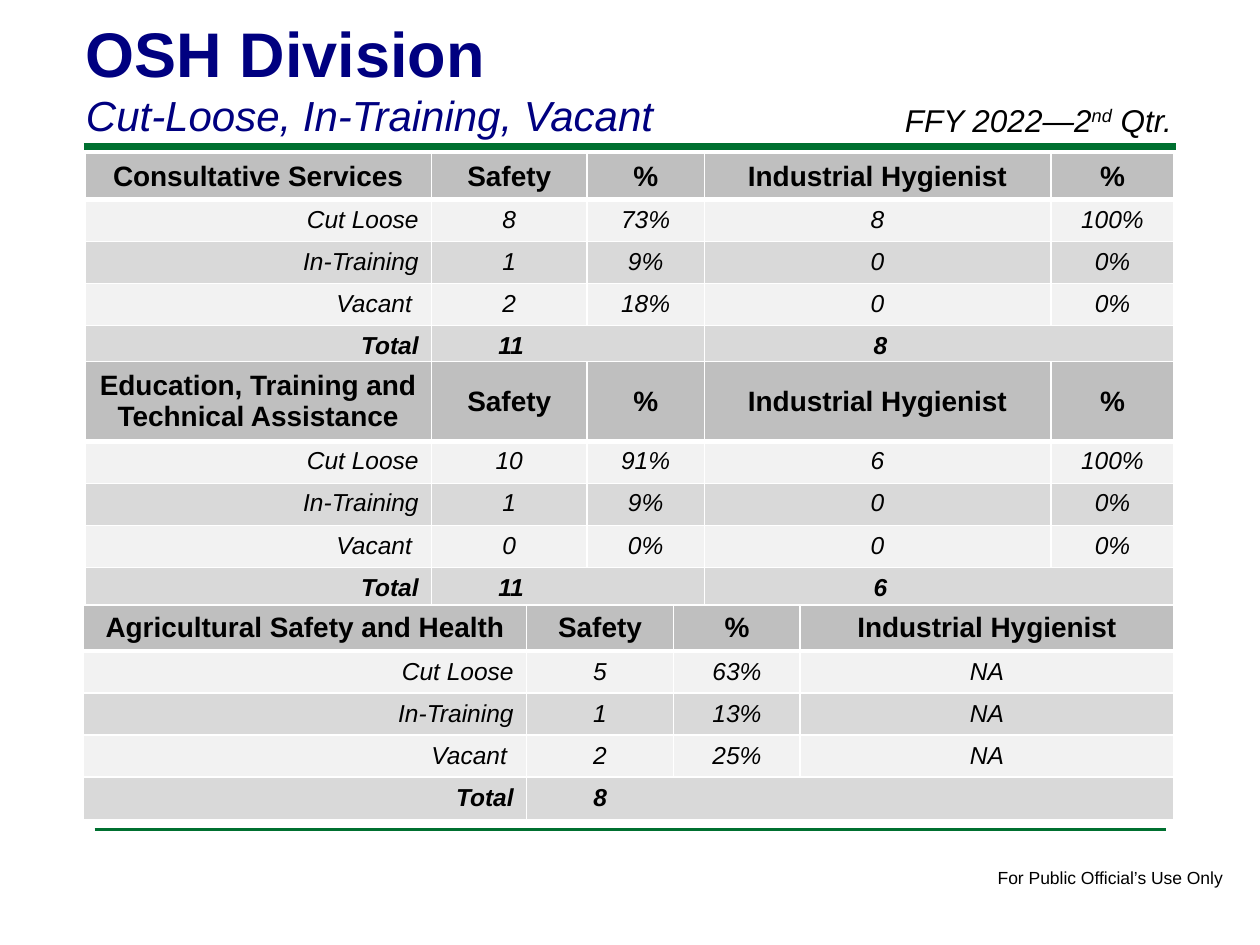
from dataclasses import dataclass

from lxml.etree import SubElement
from pptx import Presentation
from pptx.dml.color import RGBColor
from pptx.enum.shapes import MSO_CONNECTOR as Connector
from pptx.enum.text import MSO_ANCHOR as Anchor, PP_ALIGN as Align
from pptx.oxml.ns import qn
from pptx.util import Pt


@dataclass(frozen=True)
class Theme:
    font: str = "Arial"
    navy: str = "000080"
    green: str = "007030"
    black: str = "000000"
    white: str = "FFFFFF"
    header: str = "BFBFBF"
    bands: tuple = ("F2F2F2", "D9D9D9")
    title_size: float = 36
    subtitle_size: float = 24
    period_size: float = 18
    header_size: float = 16
    body_size: float = 14
    footer_size: float = 10
    thin: float = 1
    thick: float = 3


@dataclass(frozen=True)
class Rule:
    left: float
    right: float
    y: float
    weight: float


@dataclass(frozen=True)
class Total:
    value: str
    column: int
    last_column: int
    indent: float


@dataclass(frozen=True)
class StaffTable:
    left: float
    top: float
    widths: tuple
    header_height: float
    row_height: float
    header: tuple
    counts: tuple
    totals: tuple
    anchor: Anchor = Anchor.TOP


THEME = Theme()
STATUSES = ("Cut Loose", "In-Training", "Vacant ")
COLUMNS = ("Safety", "%", "Industrial Hygienist", "%")
WIDE = (198, 89, 67, 198, 70.5)
SAFETY_INDENT, HYGIENIST_INDENT = 38.3, 96.7

RULES = (Rule(48, 672, 84, 4), Rule(54, 666, 474, 2))
TABLES = (
    StaffTable(48.5, 87.6, WIDE, 25.2, 23, ("Consultative Services", *COLUMNS),
               (("8", "73%", "8", "100%"), ("1", "9%", "0", "0%"), ("2", "18%", "0", "0%")),
               (Total("11", 1, 2, SAFETY_INDENT), Total("8", 3, 4, HYGIENIST_INDENT))),
    StaffTable(48.5, 206.6, WIDE, 43.2, 22.5,
               ("Education, Training and Technical Assistance", *COLUMNS),
               (("10", "91%", "6", "100%"), ("1", "9%", "0", "0%"), ("0", "0%", "0", "0%")),
               (Total("11", 1, 2, SAFETY_INDENT), Total("6", 3, 4, HYGIENIST_INDENT))),
    StaffTable(47.8, 345.6, (253, 84.2, 72.3, 213.5), 24.5, 22.5,
               ("Agricultural Safety and Health", *COLUMNS[:3]),
               (("5", "63%", "NA"), ("1", "13%", "NA"), ("2", "25%", "NA")),
               (Total("8", 1, 3, SAFETY_INDENT),), Anchor.MIDDLE),
)


def style(paragraph, size: float, color: str = THEME.black,
          bold: bool = False, italic: bool = False) -> None:
    font = paragraph.font
    font.name, font.size, font.bold, font.italic = THEME.font, Pt(size), bold, italic
    font.color.rgb = RGBColor.from_string(color)


def add_text_frame(slide, left: float, top: float, width: float, height: float,
                   wrap: bool = True):
    frame = slide.shapes.add_textbox(Pt(left), Pt(top), Pt(width), Pt(height)).text_frame
    frame.word_wrap = wrap
    return frame


def draw_rule(slide, rule: Rule) -> None:
    line = slide.shapes.add_connector(Connector.STRAIGHT, Pt(rule.left), Pt(rule.y),
                                      Pt(rule.right), Pt(rule.y))
    line.line.color.rgb = RGBColor.from_string(THEME.green)
    line.line.width = Pt(rule.weight)
    SubElement(line._element.spPr, qn("a:effectLst"))


def set_borders(cell, top: float, bottom: float) -> None:
    properties = cell._tc.get_or_add_tcPr()
    for side, weight in (("L", THEME.thin), ("R", THEME.thin), ("T", top), ("B", bottom)):
        border = SubElement(properties, qn(f"a:ln{side}"), w=str(Pt(weight)))
        fill = SubElement(border, qn("a:solidFill"))
        SubElement(fill, qn("a:srgbClr"), val=THEME.white)


def write_cell(cell, text: str, align: Align, anchor: Anchor, size: float,
               bold: bool, italic: bool) -> None:
    cell.vertical_anchor = anchor
    paragraph = cell.text_frame.paragraphs[0]
    paragraph.text = text
    paragraph.alignment = align
    style(paragraph, size, bold=bold, italic=italic)


def draw_table(slide, staff: StaffTable) -> None:
    heights = (staff.header_height,) + (staff.row_height,) * (len(STATUSES) + 1)
    table = slide.shapes.add_table(len(heights), len(staff.widths), Pt(staff.left),
                                   Pt(staff.top), Pt(sum(staff.widths)),
                                   Pt(sum(heights))).table
    table.first_row = table.horz_banding = False
    for column, width in zip(table.columns, staff.widths):
        column.width = Pt(width)

    # Row heights, borders and banded fills
    for index, (row, height) in enumerate(zip(table.rows, heights)):
        row.height = Pt(height)
        color = THEME.bands[(index - 1) % 2] if index else THEME.header
        for cell in row.cells:
            set_borders(cell, THEME.thick if index == 1 else THEME.thin,
                        THEME.thick if index == 0 else THEME.thin)
            cell.fill.solid()
            cell.fill.fore_color.rgb = RGBColor.from_string(color)

    # Header and status rows
    for column, text in enumerate(staff.header):
        write_cell(table.cell(0, column), text, Align.CENTER, Anchor.MIDDLE,
                   THEME.header_size, True, False)
    for row, (status, counts) in enumerate(zip(STATUSES, staff.counts), 1):
        for column, text in enumerate((status, *counts)):
            write_cell(table.cell(row, column), text,
                       Align.CENTER if column else Align.RIGHT, staff.anchor,
                       THEME.body_size, False, True)

    # Total row, with merged values
    last = len(heights) - 1
    write_cell(table.cell(last, 0), "Total", Align.RIGHT, staff.anchor,
               THEME.body_size, True, True)
    for total in staff.totals:
        cell = table.cell(last, total.column)
        cell.merge(table.cell(last, total.last_column))
        cell.margin_left = Pt(total.indent)
        write_cell(cell, total.value, Align.LEFT, staff.anchor, THEME.body_size, True, True)


def main() -> None:
    presentation = Presentation()
    presentation.slide_width, presentation.slide_height = Pt(720), Pt(540)
    slide = presentation.slides.add_slide(presentation.slide_layouts[6])

    # Rules and footer
    for rule in RULES:
        draw_rule(slide, rule)
    footer = add_text_frame(slide, 563, 492, 144.7, 19.4, wrap=False).paragraphs[0]
    footer.text = "For Public Official’s Use Only"
    style(footer, THEME.footer_size)

    # Title and subtitle
    heading = add_text_frame(slide, 42, 4.5, 594, 80)
    title, subtitle = heading.paragraphs[0], heading.add_paragraph()
    title.text = "OSH Division"
    style(title, THEME.title_size, THEME.navy, bold=True)
    subtitle.text = "Cut-Loose, In-Training, Vacant"
    style(subtitle, THEME.subtitle_size, THEME.navy, italic=True)

    # Staffing tables
    for staff in TABLES:
        draw_table(slide, staff)

    # Reporting period
    period = add_text_frame(slide, 510, 54, 180, 29).paragraphs[0]
    for text in ("FFY 2022—2", "nd", " Qtr."):
        run = period.add_run()
        run.text = text
        if text == "nd":
            run.font._element.set("baseline", "30000")
    style(period, THEME.period_size, italic=True)

    presentation.save("out.pptx")


if __name__ == "__main__":
    main()
